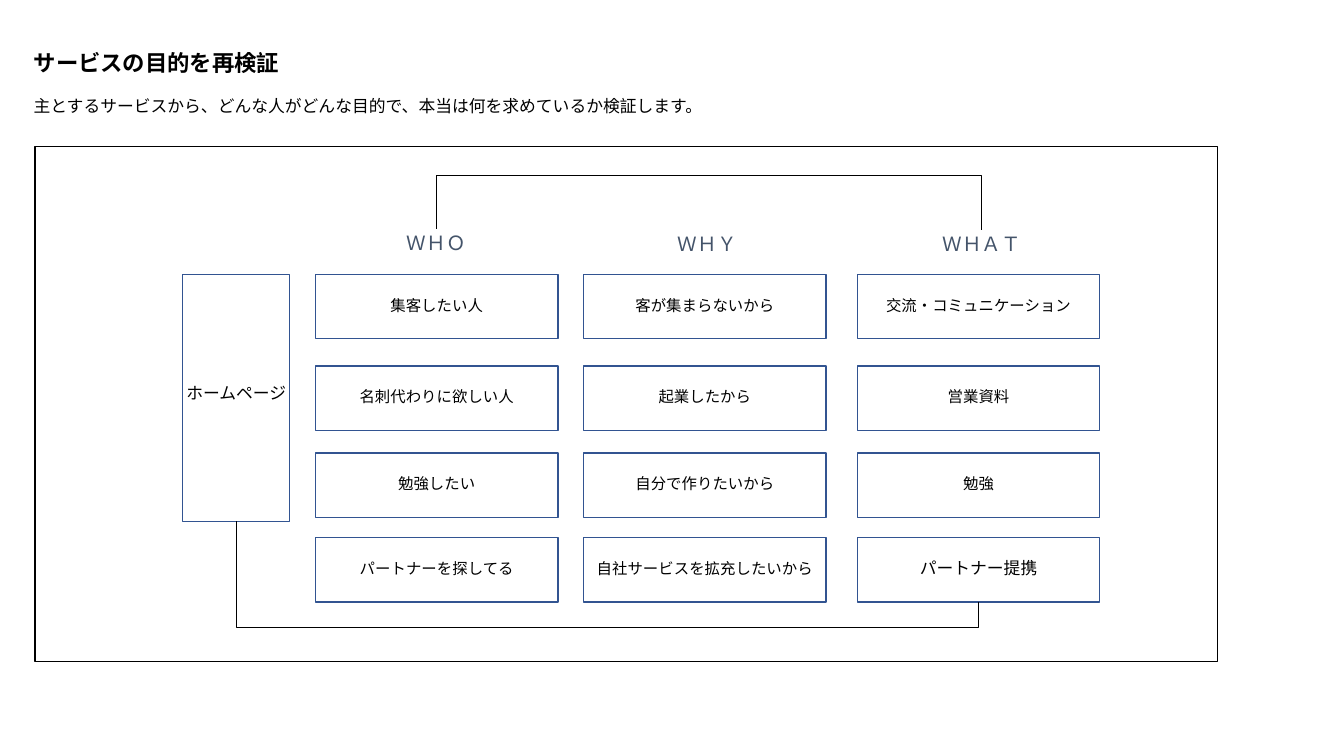
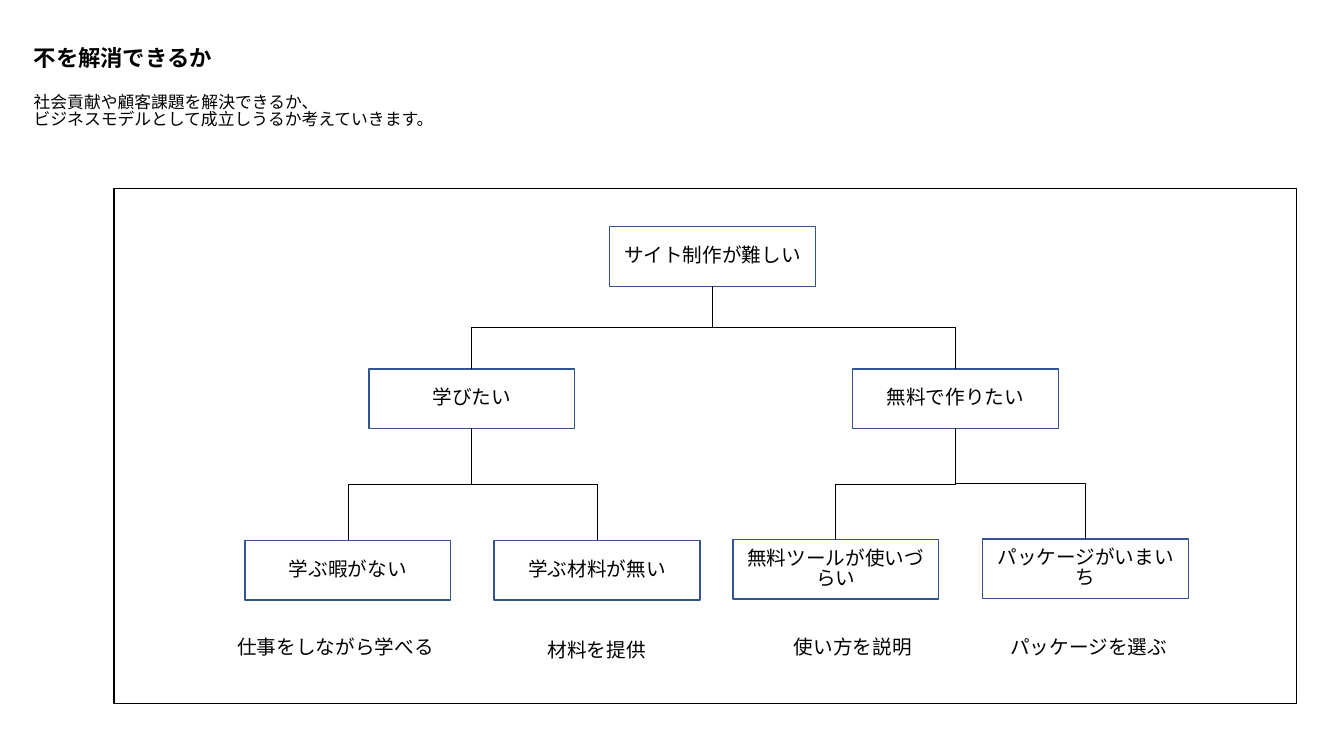
from lxml.etree import SubElement
from pptx import Presentation
from pptx.dml.color import RGBColor
from pptx.enum.shapes import MSO_CONNECTOR, MSO_SHAPE
from pptx.enum.text import MSO_ANCHOR, PP_ALIGN
from pptx.oxml.ns import qn
from pptx.util import Pt

COLORS = {"text": "000000", "frame": "000000", "box": "325491", "heading": "44546A"}
FONT = "Noto Sans CJK JP"
LINE_SPACING = 0.84
FRAME_W, FRAME_H = 844.5, 368


def rgb(name):
    return RGBColor.from_string(COLORS[name])


def write(tf, lines, size, color="text", bold=False, align=PP_ALIGN.CENTER,
          anchor=MSO_ANCHOR.MIDDLE, spacing=LINE_SPACING):
    tf.word_wrap = True
    tf.vertical_anchor = anchor
    for i, line in enumerate(lines):
        p = tf.paragraphs[0] if i == 0 else tf.add_paragraph()
        p.alignment = align
        p.line_spacing = spacing
        r = p.add_run()
        r.text = line
        r.font.size = Pt(size)
        r.font.bold = bold
        r.font.name = FONT
        r.font.color.rgb = rgb(color)
        SubElement(r.font._element, qn("a:ea")).set("typeface", FONT)


def set_insets(tf, left=0, top=0, right=0, bottom=0):
    tf.margin_left, tf.margin_top = Pt(left), Pt(top)
    tf.margin_right, tf.margin_bottom = Pt(right), Pt(bottom)


def add_box(s, x, y, w, h, color="box"):
    sp = s.shapes.add_shape(MSO_SHAPE.RECTANGLE, Pt(x), Pt(y), Pt(w), Pt(h))
    sp.shadow.inherit = False
    sp.fill.background()
    sp.line.color.rgb = rgb(color)
    sp.line.width = Pt(1)
    return sp


def add_text_box(s, x, y, w, h, text, size, color="text"):
    sp = s.shapes.add_textbox(Pt(x), Pt(y), Pt(w), Pt(h))
    set_insets(sp.text_frame)
    write(sp.text_frame, [text], size, color, spacing=1)
    return sp


def add_elbow(s, start, end, end_side=0, start_side=2, bend_y=None):
    c = s.shapes.add_connector(MSO_CONNECTOR.ELBOW, 0, 0, 0, 0)
    c.begin_connect(start, start_side)
    c.end_connect(end, end_side)
    x1, y1, x2, y2 = c.begin_x, c.begin_y, c.end_x, c.end_y
    w, h = y2 - y1, abs(x2 - x1)
    xfrm = c._element.spPr.find(qn("a:xfrm"))
    for flip in ("flipH", "flipV"):
        xfrm.attrib.pop(flip, None)
    c.left, c.top = (x1 + x2 - w) // 2, (y1 + y2 - h) // 2
    c.width, c.height = w, h
    xfrm.set("rot", str((270 if x2 > x1 else 90) * 60000))
    if x2 > x1:
        xfrm.set("flipH", "1")
    if bend_y is not None:
        geom = c._element.spPr.find(qn("a:prstGeom"))
        guides = geom.find(qn("a:avLst"))
        if guides is None:
            guides = SubElement(geom, qn("a:avLst"))
        bend = round((Pt(bend_y) - y1) / w * 100000)
        SubElement(guides, qn("a:gd"), name="adj1", fmla=f"val {bend}")
    c.line.color.rgb = rgb("frame")
    c.line.width = Pt(0.5)
    SubElement(c._element.spPr, qn("a:effectLst"))


def add_header(s, x, y, title, lead):
    for top, w, h, lines, size, bold in (
        (y, 367, 27, [title], 16, True),
        (y + 33, 617, 36, lead, 12, False),
    ):
        sp = s.shapes.add_textbox(Pt(x), Pt(top), Pt(w), Pt(h))
        write(sp.text_frame, lines, size, bold=bold, align=PP_ALIGN.LEFT,
              anchor=MSO_ANCHOR.TOP)


def add_purpose_grid(s, x, y):
    add_box(s, x, y, FRAME_W, FRAME_H, "frame")
    service = add_box(s, x + 105.5, y + 91.5, 76.5, 176.5)
    set_insets(service.text_frame, bottom=5)
    write(service.text_frame, ["ホームページ"], 12)

    rows = (91.5, 157, 219, 279.5)
    columns = (
        (200.5, 243.5, 59, "ＷＨＯ",
         ("集客したい人", "名刺代わりに欲しい人", "勉強したい", "パートナーを探してる")),
        (392, 437, 60, "ＷＨＹ",
         ("客が集まらないから", "起業したから", "自分で作りたいから", "自社サービスを拡充したいから")),
        (587.5, 633, 59.5, "ＷＨＡＴ",
         ("交流・コミュニケーション", "営業資料", "勉強", "パートナー提携")),
    )
    headings = []
    for left, head_left, head_top, heading, answers in columns:
        headings.append(add_text_box(s, x + head_left, y + head_top, 86.5, 19.5,
                                     heading, 14, "heading"))
        for top, answer in zip(rows, answers):
            cell = add_box(s, x + left, y + top, 173, 46)
            write(cell.text_frame, [answer], 12 if answer == "パートナー提携" else 11)
    add_elbow(s, headings[0], headings[-1], start_side=0, bend_y=y + 21.5)
    add_elbow(s, service, cell, end_side=2, bend_y=y + 343.5)


def add_problem_tree(s, x, y):
    add_box(s, x, y, FRAME_W, FRAME_H, "frame")

    def add_node(left, top, text, parent=None):
        sp = add_box(s, x + left, y + top, 147, 42.5)
        write(sp.text_frame, [text], 14)
        if parent is not None:
            add_elbow(s, parent, sp)
        return sp

    root = add_node(354, 27.5, "サイト制作が難しい")
    branches = (
        (182, "学びたい", (
            (93.5, 251.5, "学ぶ暇がない", 57.5, 317.5, "仕事をしながら学べる"),
            (271.5, 251.5, "学ぶ材料が無い", 244, 320, "材料を提供"))),
        (527.5, "無料で作りたい", (
            (442, 251, "無料ツールが使いづらい", 427, 317.5, "使い方を説明"),
            (620.5, 250.5, "パッケージがいまいち", 595.5, 317.5, "パッケージを選ぶ"))),
    )
    for left, wish, leaves in branches:
        branch = add_node(left, 129, wish, root)
        for leaf_left, leaf_top, problem, note_left, note_top, remedy in leaves:
            add_node(leaf_left, leaf_top, problem, branch)
            add_text_box(s, x + note_left, y + note_top, 201.5, 19.5, remedy, 14)


def main():
    prs = Presentation()
    prs.slide_width, prs.slide_height = Pt(960), Pt(540)
    blank = prs.slide_layouts[6]

    s = prs.slides.add_slide(blank)
    add_header(s, 17, 34.5, "サービスの目的を再検証",
               ["主とするサービスから、どんな人がどんな目的で、本当は何を求めているか検証します。"])
    add_purpose_grid(s, 25, 104.5)

    s = prs.slides.add_slide(blank)
    add_header(s, 17, 31, "不を解消できるか",
               ["社会貢献や顧客課題を解決できるか、", "ビジネスモデルとして成立しうるか考えていきます。"])
    add_problem_tree(s, 81.5, 134.5)

    prs.save("out.pptx")


if __name__ == "__main__":
    main()
